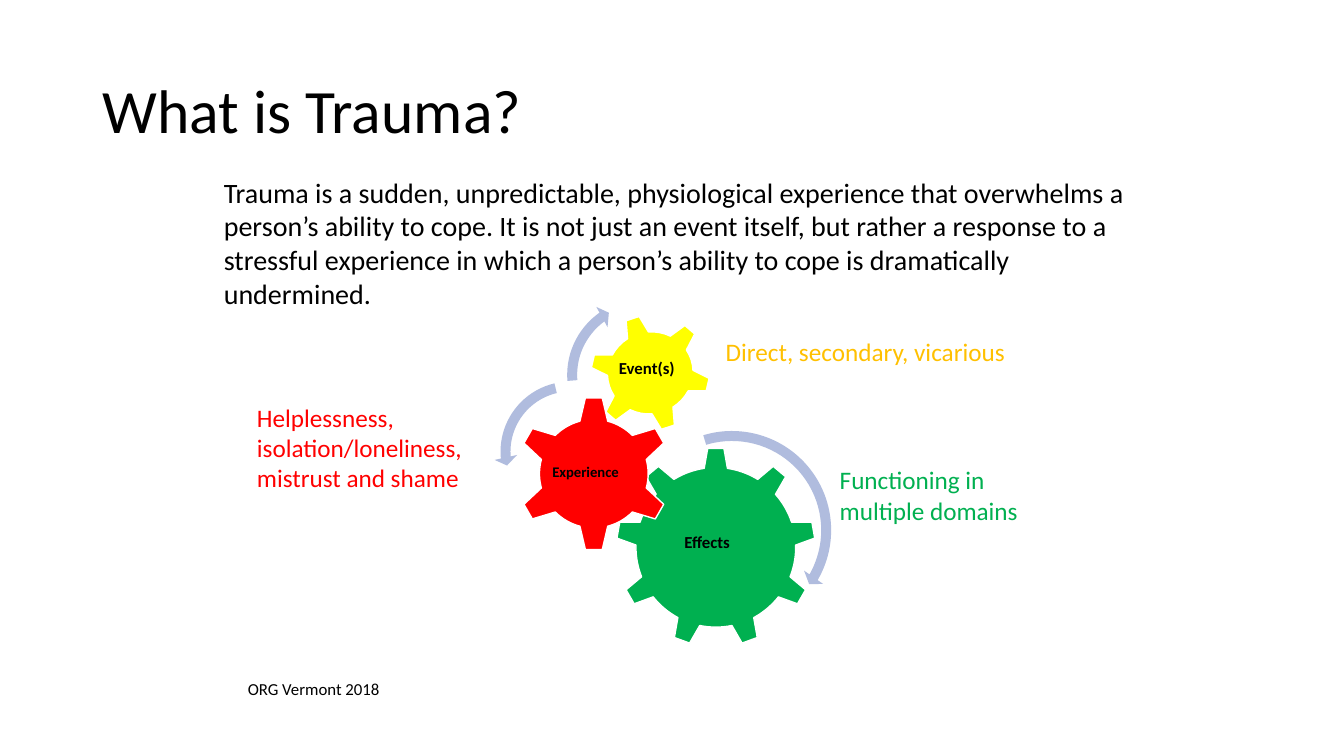
from pptx import Presentation
from pptx.dml.color import RGBColor
from pptx.enum import shapes, text
from pptx.util import Inches, Pt

BLACK, WHITE, ARROW = "000000", "FFFFFF", "B0BCDE"
RED, GREEN, YELLOW, AMBER = "FF0000", "00B050", "FFFF00", "FFC000"


def add_preset(kind, left, top, width, height, turn, color):
    shape = page.shapes.add_shape(
        kind, Inches(left), Inches(top), Inches(width), Inches(height))
    shape.rotation = turn
    shape.shadow.inherit = False
    shape.fill.solid()
    shape.fill.fore_color.rgb = RGBColor.from_string(color)
    shape.line.fill.background()
    return shape


def write(box, words, size, color, bold=False):
    """Fill a box with one left-aligned paragraph."""
    box.text_frame.text = words
    box.text_frame.word_wrap = True
    para = box.text_frame.paragraphs[0]
    para.alignment = text.PP_ALIGN.LEFT
    font = para.runs[0].font
    font.name = "Calibri"
    font.size = Pt(size)
    font.bold = bold
    font.color.rgb = RGBColor.from_string(color)


deck = Presentation()
deck.slide_width, deck.slide_height = Inches(13.33), Inches(7.5)
page = deck.slides.add_slide(deck.slide_layouts[5])

title = page.shapes.title
title.left, title.top = Inches(0.92), Inches(0.4)
title.width, title.height = Inches(11.5), Inches(1.45)
write(title, "What is Trauma?", 44, BLACK)
title.text_frame.vertical_anchor = text.MSO_ANCHOR.MIDDLE
title.text_frame.paragraphs[0].line_spacing = 0.9

# Gears: kind, left, top, width, height, turn, color
preset = shapes.MSO_SHAPE
gears = [
    (preset.GEAR_9, 6.11, 4.44, 1.98, 1.98, 0, GREEN),
    (preset.GEAR_6, 5.12, 3.93, 1.54, 1.54, 0, RED),
    (preset.GEAR_6, 5.85, 3.12, 1.2, 1.16, -18, YELLOW),
]
for gear in gears:
    outline = add_preset(*gear).line
    outline.color.rgb = RGBColor.from_string(WHITE)
    outline.width = Pt(1)

# Arrows around the gears: kind, left, top, size, turn, adjustments
arrows = [
    (preset.CIRCULAR_ARROW, 6.21, 4.21, 2.1, 348.3,
     (0.047, 2.99, 25.012, 158.939, 0.055)),
    (preset.LEFT_CIRCULAR_ARROW, 4.9, 3.72, 1.52, 0,
     (0.065, 4.3, 104.891, 153.996, 0.075)),
    (preset.CIRCULAR_ARROW, 5.56, 2.9, 1.64, 12.6,
     (0.06, 3.941, 133.138, 97.712, 0.07)),
]
for kind, left, top, size, turn, adjustments in arrows:
    arrow = add_preset(kind, left, top, size, size, turn, ARROW)
    for index, value in enumerate(adjustments):
        arrow.adjustments[index] = value

# Text boxes: left, top, width, height, words, size, color, bold
labels = [
    (6.04, 3.5, 1.01, 0.3, "Event(s)", 12, BLACK, True),
    (5.38, 4.54, 1.04, 0.28, "Experience", 10.5, BLACK, True),
    (6.69, 5.23, 1.13, 0.3, "Effects", 12, BLACK, True),
    (7.1, 3.29, 3.43, 0.4, "Direct, secondary, vicarious", 18, AMBER, False),
    (2.45, 3.94, 2.44, 1.01,
     "Helplessness, isolation/loneliness, mistrust and shame", 18, RED, False),
    (8.23, 4.56, 2.22, 0.71, "Functioning in multiple domains", 18, GREEN, False),
    (2.36, 6.68, 1.94, 0.3, "ORG Vermont 2018", 12, BLACK, False),
]
for left, top, width, height, *content in labels:
    label = page.shapes.add_textbox(
        Inches(left), Inches(top), Inches(width), Inches(height))
    write(label, *content)

definition = page.shapes.add_textbox(
    Inches(2.22), Inches(1.74), Inches(8.94), Inches(1.2))
write(definition,
      "Trauma is a sudden, unpredictable, physiological experience that "
      "overwhelms a person’s ability to cope. It is not just an event itself, "
      "but rather a response to a stressful experience in which a person’s "
      "ability to cope is dramatically undermined.", 20, BLACK)
frame = definition.text_frame
frame.margin_left = frame.margin_right = frame.margin_top = frame.margin_bottom = 0

deck.save("out.pptx")
